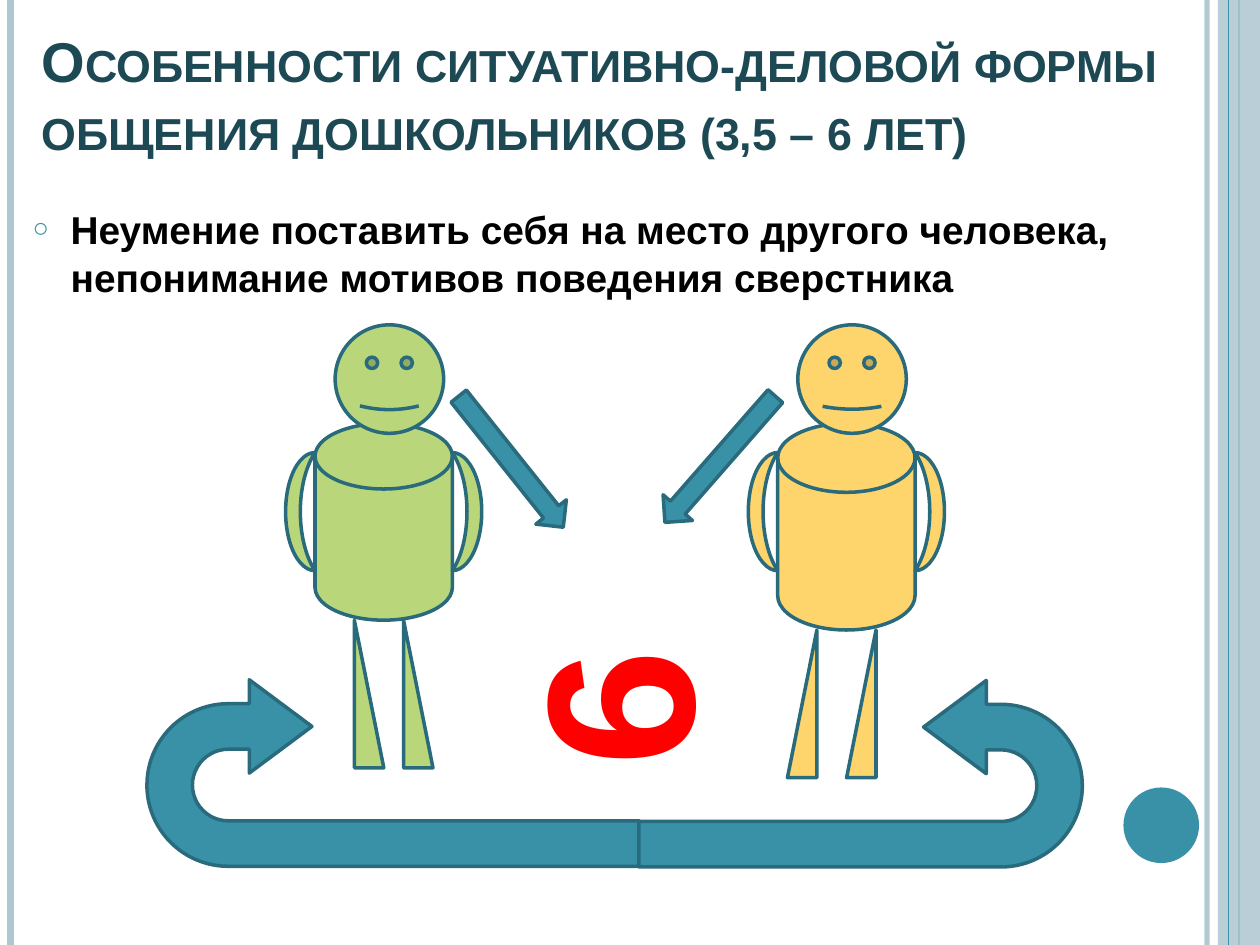
from dataclasses import dataclass

import pptx
import pptx.dml.color
import pptx.enum.shapes
import pptx.enum.text
import pptx.oxml
import pptx.oxml.ns
import pptx.util
from lxml import etree

Pt = pptx.util.Pt
MSO = pptx.enum.shapes.MSO_SHAPE
TEAL, DARK_TEAL, PALE_BLUE = "3891A7", "296B7C", "AFC7D0"


@dataclass
class Box:
    x: float
    y: float
    w: float
    h: float


@dataclass
class Rule:
    x: float
    color: str
    width: float
    alpha: int = 100


@dataclass
class Person:
    x: float
    color: str
    torso_h: float
    leg_offsets: tuple[float, float]
    legs_flipped: bool
    smile: float


@dataclass
class Arrow:
    kind: int
    box: Box
    rotation: float
    adjustments: tuple[float, ...] = ()
    flipped: bool = False


def paint(color_format, color: str) -> None:
    color_format.rgb = pptx.dml.color.RGBColor.from_string(color)


def sub(parent, tag: str, **attrs: str):
    el = etree.SubElement(parent, pptx.oxml.ns.qn(tag))
    for name, value in attrs.items():
        el.set(name, value)
    return el


def set_alpha(element, alpha: int) -> None:
    if alpha < 100:
        for color in element.iter(pptx.oxml.ns.qn("a:srgbClr")):
            sub(color, "a:alpha", val=str(alpha * 1000))


def place(sp, box: Box) -> None:
    sp.left, sp.top, sp.width, sp.height = map(Pt, (box.x, box.y, box.w, box.h))


def add_rule(s, rule: Rule) -> None:
    cx = s.shapes.add_connector(pptx.enum.shapes.MSO_CONNECTOR.STRAIGHT,
                                Pt(rule.x), Pt(0), Pt(rule.x), Pt(540))
    paint(cx.line.fill.fore_color if cx.line.fill.solid() else cx.line.color, rule.color)
    cx.line.width = Pt(rule.width)
    sp_pr = cx._element.spPr
    set_alpha(sp_pr, rule.alpha)
    sub(sp_pr, "a:effectLst")


def add_shape(s, kind: int, box: Box, fill: str, line: str | None = DARK_TEAL,
              adjustments: tuple[float, ...] = (), flipped: bool = False,
              rotation: float = 0):
    sp = s.shapes.add_shape(kind, Pt(box.x), Pt(box.y), Pt(box.w), Pt(box.h))
    sp.shadow.inherit = False
    sp.fill.solid()
    paint(sp.fill.fore_color, fill)
    if line:
        paint(sp.line.color, line)
        sp.line.width = Pt(2)
    else:
        sp.line.fill.background()
    for i, value in enumerate(adjustments):
        sp.adjustments[i] = value
    sp.rotation = rotation
    if flipped:
        sp._element.spPr.find(pptx.oxml.ns.qn("a:xfrm")).set("flipH", "1")
    return sp


def add_person(s, person: Person) -> None:
    x, color = person.x, person.color
    torso = Box(x, 242, 78.5, person.torso_h)
    add_shape(s, MSO.FLOWCHART_MAGNETIC_DISK, torso, color)
    add_shape(s, MSO.SMILEY_FACE, Box(x + 11.5, 185.6, 62, 62), color,
              adjustments=(person.smile,))
    for offset in person.leg_offsets:
        add_shape(s, MSO.RIGHT_TRIANGLE, Box(x + offset, torso.y + torso.h, 16.8, 84.4),
                  color, flipped=person.legs_flipped)
    for offset, flipped in ((-16.8, False), (torso.w, True)):
        add_shape(s, MSO.MOON, Box(x + offset, 258.6, 16.8, 67.5), color, flipped=flipped)


def style_text(tf, size: float, color: str):
    p = tf.paragraphs[0]
    r = p.runs[0]
    r.font.name = "Arial"
    r.font.size = Pt(size)
    r.font.bold = True
    paint(r.font.color, color)
    return p, r


def add_title(s) -> None:
    sp = s.shapes.title
    place(sp, Box(16.5, 21.6, 664, 74.2))
    tf = sp.text_frame
    tf.text = "Особенности ситуативно-деловой формы общения дошкольников (3,5 – 6 лет)"
    tf.auto_size = pptx.enum.text.MSO_AUTO_SIZE.NONE
    tf.vertical_anchor = pptx.enum.text.MSO_ANCHOR.BOTTOM
    p, r = style_text(tf, 32, "1C4954")
    p.alignment = pptx.enum.text.PP_ALIGN.LEFT
    r.font._element.set("cap", "small")


def add_body(s) -> None:
    sp = s.placeholders[1]
    place(sp, Box(11.5, 112.3, 675.4, 56.2))
    tf = sp.text_frame
    tf.text = ("Неумение поставить себя на место другого человека, "
               "непонимание мотивов поведения сверстника")
    tf.auto_size = pptx.enum.text.MSO_AUTO_SIZE.NONE
    p, r = style_text(tf, 22.2, "000000")
    p.space_before = Pt(6)
    p.line_spacing = 1.05
    p_pr = p._p.get_or_add_pPr()
    p_pr.set("marL", str(Pt(21.6)))
    p_pr.set("indent", str(-Pt(21.6)))
    sub(sub(p_pr, "a:buClr"), "a:srgbClr", val=TEAL)
    sub(p_pr, "a:buSzPct", val="70000")
    sub(p_pr, "a:buChar", char="○")


def add_digit(s) -> None:
    sp = s.shapes.add_textbox(Pt(304.6), Pt(328.3), Pt(90), Pt(152.6))
    sp.rotation = 270
    tf = sp.text_frame
    tf.word_wrap = True
    tf.text = "6"
    p, r = style_text(tf, 120, "FF0000")
    p.alignment = pptx.enum.text.PP_ALIGN.CENTER


def main() -> None:
    prs = pptx.Presentation()
    prs.slide_width, prs.slide_height = Pt(720), Pt(540)
    s = prs.slides.add_slide(prs.slide_layouts[1])

    for rule in (Rule(689.8, PALE_BLUE, 3, 93), Rule(6, PALE_BLUE, 4.5),
                 Rule(708, TEAL, 1.5)):
        add_rule(s, rule)
    band = add_shape(s, MSO.RECTANGLE, Box(696, 0, 24, 540), PALE_BLUE, None)
    set_alpha(band._element.spPr, 87)
    add_rule(s, Rule(702, TEAL, 0.75))
    add_shape(s, MSO.OVAL, Box(642, 450, 43.2, 43.2), TEAL, None)

    add_title(s)
    add_body(s)
    for person in (Person(180, "B9D77A", 112.4, (22.5, 50.6), False, 0.017),
                   Person(444.4, "FED46C", 118, (5.6, 39.4), True, 0.013)):
        add_person(s, person)
    add_digit(s)

    bend = (0.244, 0.25, 0.336, 0.438)
    for arrow in (
        Arrow(MSO.U_TURN_ARROW, Box(171.4, 301, 106.6, 281.5), 270, bend + (0.335,)),
        Arrow(MSO.U_TURN_ARROW, Box(438.5, 315.4, 106.6, 253.4), 90, bend + (0.358,), True),
        Arrow(MSO.RIGHT_ARROW, Box(244.1, 252.7, 95.8, 22.3), 51.4),
        Arrow(MSO.RIGHT_ARROW, Box(363.6, 251.3, 95.8, 22.3), 131.2),
    ):
        add_shape(s, arrow.kind, arrow.box, TEAL, adjustments=arrow.adjustments,
                  flipped=arrow.flipped, rotation=arrow.rotation)
    prs.save("out.pptx")


if __name__ == "__main__":
    main()
